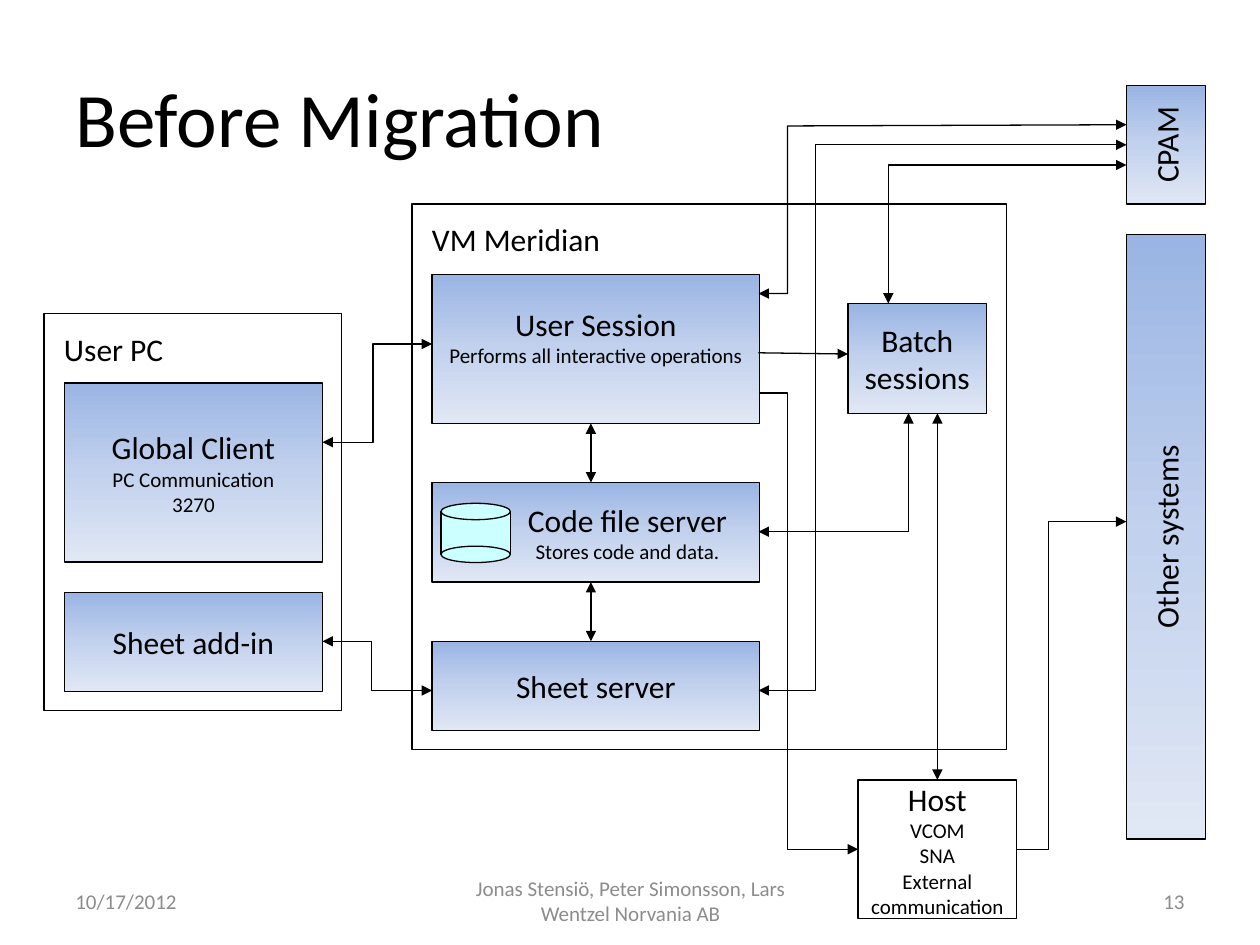
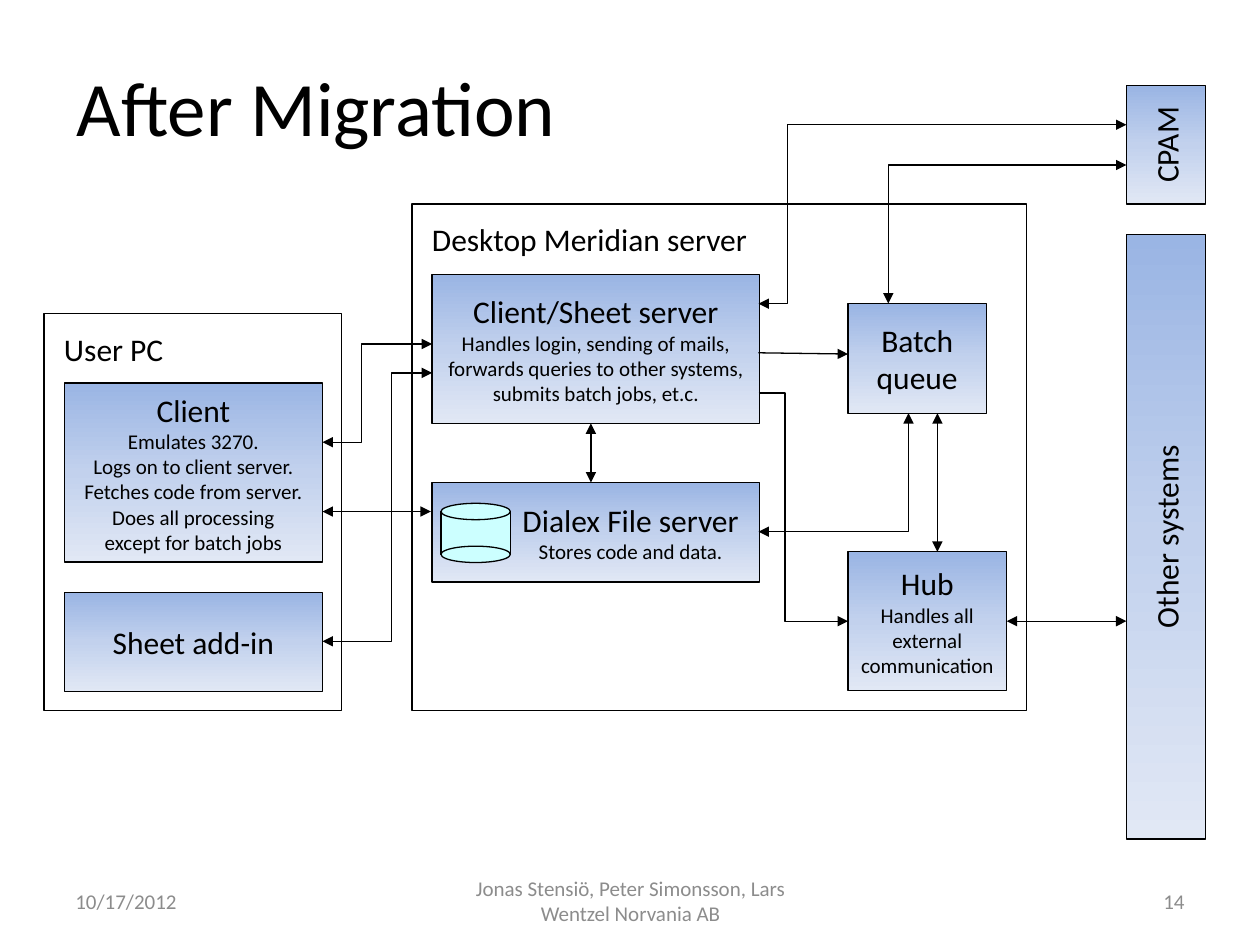
from copy import deepcopy

from lxml.etree import SubElement
from pptx import Presentation
from pptx.dml.color import RGBColor
from pptx.enum.shapes import MSO_CONNECTOR, MSO_SHAPE
from pptx.enum.text import MSO_ANCHOR, PP_ALIGN
from pptx.oxml.ns import qn
from pptx.util import Inches, Pt

BLACK = RGBColor(0x00, 0x00, 0x00)
GREY = RGBColor(0x8C, 0x8C, 0x8C)
CYAN = RGBColor(0xCC, 0xFF, 0xFF)
BLUE_STOPS = [
    (0, RGBColor(0x9A, 0xB5, 0xE4)),
    (0.5, RGBColor(0xC2, 0xD1, 0xED)),
    (1, RGBColor(0xE1, 0xE8, 0xF5)),
]
FONT = "Calibri"
TITLE_SIZE, HEAD_SIZE, DETAIL_SIZE = 44, 18, 12
LINE_WIDTH = Pt(0.75)
INSET = 0.1

# Places are (left, top, width, height) in inches.
CLIENT_PLACE = (0.51, 3.04, 2.05, 1.42)
SESSION_PLACE = (3.43, 2.18, 2.6, 1.18)
FILE_PLACE = (3.43, 3.83, 2.6, 0.79)
BATCH_PLACE = (6.73, 2.41, 1.1, 0.87)

DATE = "10/17/2012"
AUTHORS = "Jonas Stensiö, Peter Simonsson, Lars Wentzel Norvania AB"

USER_PC = {"label": "User PC", "place": (0.35, 2.49, 2.36, 3.15)}

# A box has head lines and detail lines; "left" and "bottom" are extra insets.
SHARED_BOXES = [
    {"place": (0.51, 4.7, 2.05, 0.79), "head": ["Sheet add-in"]},
    {"place": (8.94, 0.68, 0.63, 0.94), "head": ["CPAM"], "upright": True},
    {"place": (8.94, 1.86, 0.63, 4.8), "head": ["Other systems"], "upright": True},
]

# An arrow is its corner points and the heads it has: "both" or "end".
# "joins" names the box and side where its first point is attached.
SHARED_ARROWS = [
    {"points": [(4.69, 3.83), (4.69, 3.36)]},
    {"points": [(6.02, 2.8), (6.73, 2.81)], "heads": "end"},
    {"points": [(6.02, 4.22), (7.21, 4.22), (7.21, 3.28)]},
    {"points": [(7.05, 2.41), (7.05, 1.31), (8.94, 1.31)]},
]

SLIDES = [
    {
        "title": "Before Migration",
        "title_at": (0.5, 0.3),
        "number": "13",
        "server": {"label": "VM Meridian", "place": (3.27, 1.62, 4.72, 4.33)},
        "boxes": [
            {"place": CLIENT_PLACE, "head": ["Global Client"],
             "detail": ["PC Communication", "3270"]},
            {"place": SESSION_PLACE, "head": ["User Session"],
             "detail": ["Performs all interactive operations"], "bottom": 0.2},
            {"place": FILE_PLACE, "head": ["Code file server"],
             "detail": ["Stores code and data."], "left": 0.5},
            {"place": (3.43, 5.09, 2.6, 0.71), "head": ["Sheet server"]},
            {"place": BATCH_PLACE, "head": ["Batch", "sessions"]},
            {"place": (6.81, 6.19, 1.26, 1.1), "head": ["Host"],
             "detail": ["VCOM", "SNA", "External", "communication"],
             "plain": True},
        ],
        "arrows": [
            {"points": [(2.56, 3.51), (2.96, 3.51), (2.96, 2.73), (3.43, 2.73)]},
            {"points": [(2.56, 5.09), (2.95, 5.09), (2.95, 5.48), (3.43, 5.48)]},
            {"points": [(4.69, 5.09), (4.69, 4.62)]},
            {"points": [(7.44, 6.19), (7.44, 3.28)], "joins": ("Host", 0)},
            {"points": [(6.02, 2.33), (6.25, 2.33), (6.25, 1), (8.94, 0.99)]},
            {"points": [(6.02, 5.48), (6.47, 5.48), (6.47, 1.15), (8.94, 1.15)]},
            {"points": [(6.02, 3.12), (6.25, 3.12), (6.25, 6.74), (6.81, 6.74)],
             "heads": "end"},
            {"points": [(8.07, 6.74), (8.32, 6.74), (8.32, 4.14), (8.94, 4.14)],
             "heads": "end"},
        ],
    },
    {
        "title": "After Migration",
        "title_at": (0.51, 0.21),
        "number": "14",
        "server": {"label": "Desktop Meridian server",
                   "place": (3.27, 1.62, 4.88, 4.02)},
        "boxes": [
            {"place": CLIENT_PLACE, "head": ["Client"],
             "detail": ["Emulates 3270.", "Logs on to client server.",
                        "Fetches code from server.", "Does all processing",
                        "except for batch jobs"]},
            {"place": SESSION_PLACE, "head": ["Client/Sheet server"],
             "detail": ["Handles login, sending of mails,",
                        "forwards queries to other systems,",
                        "submits batch jobs, et.c."]},
            {"place": FILE_PLACE, "head": ["Dialex File server"],
             "detail": ["Stores code and data."], "left": 0.55},
            {"place": BATCH_PLACE, "head": ["Batch", "queue"]},
            {"place": (6.73, 4.38, 1.26, 1.1), "head": ["Hub"],
             "detail": ["Handles all", "external", "communication"]},
        ],
        "arrows": [
            {"points": [(2.56, 3.51), (2.87, 3.51), (2.87, 2.73), (3.43, 2.73)]},
            {"points": [(2.56, 5.09), (3.11, 5.09), (3.11, 2.96), (3.43, 2.96)]},
            {"points": [(2.56, 4.06), (3.42, 4.06)]},
            {"points": [(7.44, 4.38), (7.44, 3.28)]},
            {"points": [(7.99, 4.93), (8.94, 4.93)], "joins": ("Hub", 3)},
            {"points": [(6.02, 2.41), (6.25, 2.41), (6.25, 0.99), (8.94, 0.99)]},
            {"points": [(6.02, 3.12), (6.23, 3.12), (6.23, 4.93), (6.73, 4.93)],
             "heads": "end"},
        ],
    },
]


def inches(values):
    return [Inches(value) for value in values]


def write_lines(frame, lines, color=BLACK, align=PP_ALIGN.LEFT):
    """Put each (text, size) pair in a paragraph of its own."""
    for index, (text, size) in enumerate(lines):
        para = frame.add_paragraph() if index else frame.paragraphs[0]
        para.alignment = align
        span = para.add_run()
        span.text = text
        span.font.name = FONT
        span.font.size = Pt(size)
        span.font.color.rgb = color


def add_text(page, place, text, size, color=BLACK, align=PP_ALIGN.LEFT,
             anchor=MSO_ANCHOR.MIDDLE):
    frame = page.shapes.add_textbox(*inches(place)).text_frame
    frame.word_wrap = True
    frame.vertical_anchor = anchor
    write_lines(frame, [(text, size)], color, align)


def add_outlined(page, place, kind=MSO_SHAPE.RECTANGLE, fill=None):
    shape = page.shapes.add_shape(kind, *inches(place))
    shape.shadow.inherit = False
    shape.line.color.rgb = BLACK
    shape.line.width = LINE_WIDTH
    if fill is None:
        shape.fill.background()
    else:
        shape.fill.solid()
        shape.fill.fore_color.rgb = fill
    return shape


def fill_with_blue_gradient(shape):
    shape.fill.gradient()
    shape.fill.gradient_angle = 270
    stop_list = shape.element.spPr.find(qn("a:gradFill")).find(qn("a:gsLst"))
    stop_list.append(deepcopy(stop_list[0]))
    for stop, (position, color) in zip(shape.fill.gradient_stops, BLUE_STOPS):
        stop.position = position
        stop.color.rgb = color


def add_frame(page, label, place):
    add_outlined(page, place)
    left, top = place[:2]
    add_text(page, (left + 0.06, top + 0.08, 2.9, 0.4), label, HEAD_SIZE,
             anchor=MSO_ANCHOR.TOP)


def add_box(page, place, head, detail=(), left=0, bottom=0, upright=False,
            plain=False):
    box = add_outlined(page, place)
    if not plain:
        fill_with_blue_gradient(box)
    frame = box.text_frame
    frame.word_wrap = False
    frame.vertical_anchor = MSO_ANCHOR.MIDDLE
    frame.margin_left = Inches(INSET + left)
    frame.margin_bottom = Inches(INSET / 2 + bottom)
    if upright:
        frame._txBody.bodyPr.set("vert", "vert270")
    lines = [(text, HEAD_SIZE) for text in head]
    lines += [(text, DETAIL_SIZE) for text in detail]
    write_lines(frame, lines, align=PP_ALIGN.CENTER)
    return box


def add_file_store(page):
    left, top, width, body, rim = 3.5, 4.06, 0.55, 0.34, 0.13
    add_outlined(page, (left, top, width, body), fill=CYAN)
    for rim_top in (top - rim / 2, top + body - rim / 2):
        add_outlined(page, (left, rim_top, width, rim), MSO_SHAPE.OVAL, CYAN)


def add_arrow(page, boxes, points, heads="both", joins=None):
    """Draw two points as a connector and more points as an open outline."""
    corners = [inches(point) for point in points]
    if len(corners) == 2:
        arrow = page.shapes.add_connector(
            MSO_CONNECTOR.STRAIGHT, *corners[0], *corners[1])
        if joins:
            name, side = joins
            arrow.begin_connect(boxes[name], side)
    else:
        builder = page.shapes.build_freeform(*corners[0])
        builder.add_line_segments(corners[1:], close=False)
        arrow = builder.convert_to_shape()
        arrow.fill.background()
    arrow.line.color.rgb = BLACK
    arrow.line.width = LINE_WIDTH
    line = arrow.line._get_or_add_ln()
    for end in ("headEnd", "tailEnd") if heads == "both" else ("tailEnd",):
        SubElement(line, qn(f"a:{end}"), type="triangle")
    SubElement(arrow.element.spPr, qn("a:effectLst"))


def add_footer(page, number):
    for left, width, text, align in [
        (0.5, 2.33, DATE, PP_ALIGN.LEFT),
        (3.42, 3.17, AUTHORS, PP_ALIGN.CENTER),
        (7.17, 2.33, number, PP_ALIGN.RIGHT),
    ]:
        add_text(page, (left, 6.95, width, 0.4), text, DETAIL_SIZE, GREY, align)


def add_page(deck, content):
    page = deck.slides.add_slide(deck.slide_layouts[6])
    add_text(page, (*content["title_at"], 9, 1.25), content["title"], TITLE_SIZE)
    for frame in (USER_PC, content["server"]):
        add_frame(page, **frame)
    boxes = {box["head"][0]: add_box(page, **box)
             for box in content["boxes"] + SHARED_BOXES}
    add_file_store(page)
    for arrow in SHARED_ARROWS + content["arrows"]:
        add_arrow(page, boxes, **arrow)
    add_footer(page, content["number"])


def main():
    deck = Presentation()
    deck.slide_width, deck.slide_height = Inches(10), Inches(7.5)
    for content in SLIDES:
        add_page(deck, content)
    deck.save("out.pptx")


if __name__ == "__main__":
    main()
